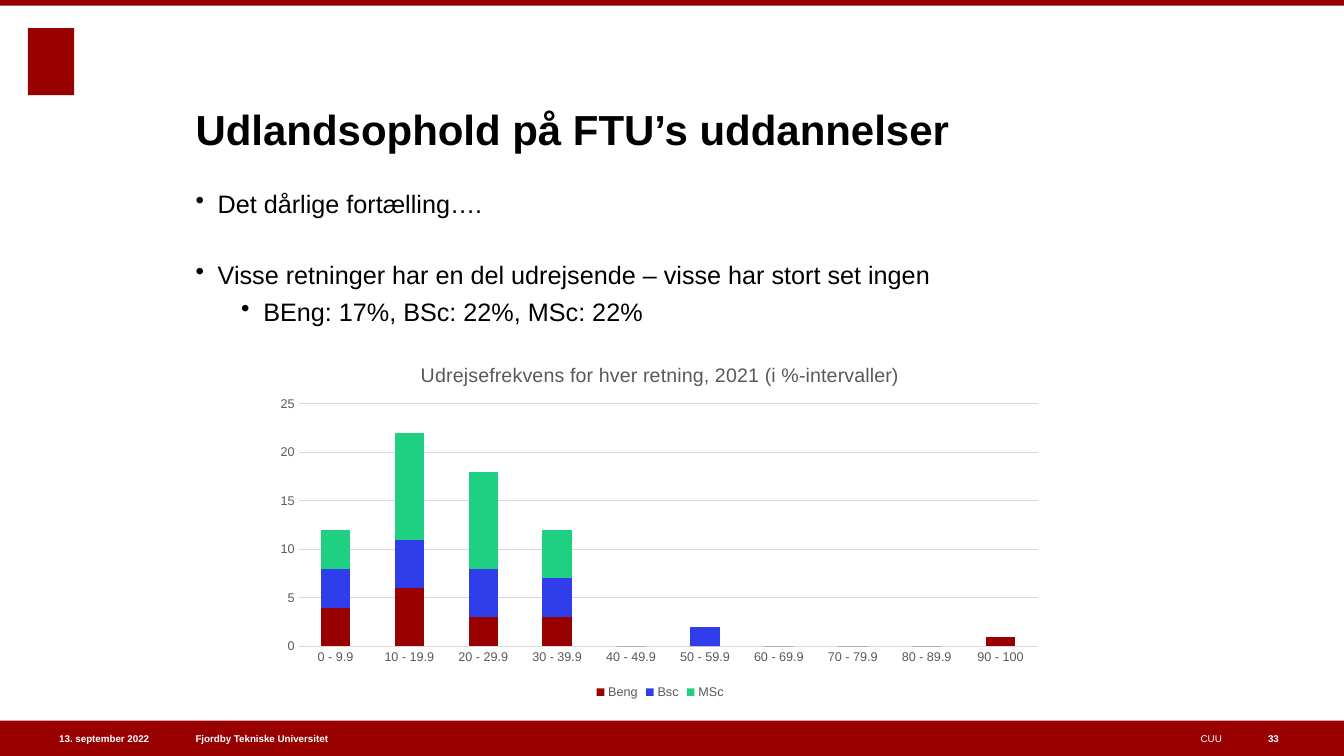
from lxml.etree import SubElement
from pptx import Presentation
from pptx.chart.data import CategoryChartData
from pptx.dml.color import RGBColor
from pptx.enum.chart import XL_CHART_TYPE as ChartType, XL_LEGEND_POSITION as LegendPosition
from pptx.enum.chart import XL_TICK_MARK as TickMark
from pptx.enum.shapes import MSO_SHAPE as Shape
from pptx.enum.text import MSO_ANCHOR as Anchor, PP_ALIGN as Align
from pptx.oxml.ns import qn
from pptx.util import Pt

COLORS = {"red": "990000", "blue": "2F3EEA", "green": "1FD082", "black": "000000",
          "white": "FFFFFF", "gray": "595959", "rule": "D9D9D9"}
FONT = "Arial"
WIDTH, HEIGHT = 960, 540
FOOTER_HEIGHT = 25.2
MARGIN, COLUMN_WIDTH = 139.7, 733

FOOTER = [
    (19.4, 87.1, "13. september 2022", Align.RIGHT, True),
    (MARGIN, 268, "Fjordby Tekniske Universitet", Align.LEFT, True),
    (440, 432.7, "CUU", Align.RIGHT, False),
    (905.8, 33.8, "33", Align.LEFT, True),
]
BULLETS = [
    ("Det dårlige fortælling….", 0, 0),
    ("Visse retninger har en del udrejsende – visse har stort set ingen", 0, 29.3),
    ("BEng: 17%, BSc: 22%, MSc: 22%", 1, 4.5),
]
CATEGORIES = [f"{low} - {low + 9}.9" for low in range(0, 90, 10)] + ["90 - 100"]
SERIES = [
    ("Beng", "red", (4, 6, 3, 3, 0, 0, 0, 0, 0, 1)),
    ("Bsc", "blue", (4, 5, 5, 4, 0, 2, 0, 0, 0, 0)),
    ("MSc", "green", (4, 11, 10, 5, 0, 0, 0, 0, 0, 0)),
]


def color(name):
    """Return the named colour."""
    return RGBColor.from_string(COLORS[name])


def style_font(font, size, name, bold=False):
    """Set typeface, size, colour and weight."""
    font.name, font.size, font.bold = FONT, Pt(size), bold
    font.color.rgb = color(name)


def add_bar(slide, left, top, width, height):
    """Draw a plain red bar."""
    shape = slide.shapes.add_shape(Shape.RECTANGLE, Pt(left), Pt(top), Pt(width), Pt(height))
    shape.shadow.inherit = False
    shape.fill.solid()
    shape.fill.fore_color.rgb = color("red")
    shape.line.fill.background()


def add_text_frame(slide, left, top, width, height, anchor):
    """Add a wrapping text box without insets and return its frame."""
    frame = slide.shapes.add_textbox(Pt(left), Pt(top), Pt(width), Pt(height)).text_frame
    frame.word_wrap = True
    frame.vertical_anchor = anchor
    frame.margin_left = frame.margin_right = frame.margin_top = frame.margin_bottom = 0
    return frame


def add_line(slide, left, top, width, height, text, size, name, bold, anchor, align=Align.LEFT):
    """Add a text box holding one paragraph."""
    paragraph = add_text_frame(slide, left, top, width, height, anchor).paragraphs[0]
    paragraph.text = text
    paragraph.alignment = align
    style_font(paragraph.font, size, name, bold)


def add_footer(slide, left, top, width, height):
    """Draw the footer band and its texts."""
    add_bar(slide, left, top, width, height)
    for offset, text_width, text, align, bold in FOOTER:
        add_line(slide, left + offset, top, text_width, height, text, 7, "white", bold,
                 Anchor.MIDDLE, align)


def add_bullets(slide, left, top, width, height):
    """Write the bulleted list with hanging indents."""
    frame = add_text_frame(slide, left, top, width, height, Anchor.TOP)
    for index, (text, level, gap) in enumerate(BULLETS):
        paragraph = frame.add_paragraph() if index else frame.paragraphs[0]
        paragraph.text = text
        paragraph.level = level
        paragraph.space_before = Pt(gap)
        style_font(paragraph.font, 18, "black")
        properties = paragraph._p.get_or_add_pPr()
        properties.set("marL", str(Pt(15.8 + 32.6 * level)))
        properties.set("indent", str(-Pt(15.8)))
        bullet = properties.makeelement(qn("a:buChar"), {"char": "•"})
        properties.insert_element_before(bullet, "a:tabLst", "a:defRPr", "a:extLst")


def place_plot(chart, x, y, w, h):
    """Fix the inner plot area, in fractions of the chart."""
    plot_area = chart.element.find(".//" + qn("c:plotArea"))
    for layout in plot_area.findall(qn("c:layout")):
        plot_area.remove(layout)
    layout = plot_area.makeelement(qn("c:layout"), {})
    plot_area.insert(0, layout)
    manual = SubElement(layout, qn("c:manualLayout"))
    settings = {"layoutTarget": "inner", "xMode": "edge", "yMode": "edge",
                "x": x, "y": y, "w": w, "h": h}
    for tag, value in settings.items():
        SubElement(manual, qn("c:" + tag)).set("val", str(value))


def style_axes(chart):
    """Style both axes and the gridlines."""
    for axis in (chart.category_axis, chart.value_axis):
        axis.major_tick_mark = axis.minor_tick_mark = TickMark.NONE
        style_font(axis.tick_labels.font, 9, "gray")
    values = chart.value_axis
    values.minimum_scale, values.maximum_scale, values.major_unit = 0, 25, 5
    values.format.line.fill.background()
    for line in (chart.category_axis.format.line, values.major_gridlines.format.line):
        line.color.rgb = color("rule")
        line.width = Pt(0.75)


def add_frequency_chart(slide, left, top, width, height):
    """Add the stacked columns of travel frequencies."""
    data = CategoryChartData()
    data.categories = CATEGORIES
    for name, _, values in SERIES:
        data.add_series(name, values)
    chart = slide.shapes.add_chart(ChartType.COLUMN_STACKED, Pt(left), Pt(top), Pt(width),
                                   Pt(height), data).chart
    style_font(chart.font, 10, "black")
    chart.has_title = True
    title = chart.chart_title
    title.include_in_layout = False
    paragraph = title.text_frame.paragraphs[0]
    paragraph.text = "Udrejsefrekvens for hver retning, 2021 (i %-intervaller)"
    style_font(paragraph.font, 14, "gray")
    chart.has_legend = True
    chart.legend.position = LegendPosition.BOTTOM
    chart.legend.include_in_layout = False
    style_font(chart.legend.font, 9, "gray")
    plot = chart.plots[0]
    plot.gap_width, plot.overlap, plot.vary_by_categories = 150, 100, False
    for series, (_, fill, _) in zip(plot.series, SERIES):
        series.format.fill.solid()
        series.format.fill.fore_color.rgb = color(fill)
    style_axes(chart)
    place_plot(chart, 0.04, 0.16, 0.94, 0.68)


def build_slide(presentation):
    """Compose the slide from its regions."""
    slide = presentation.slides.add_slide(presentation.slide_layouts[6])
    add_footer(slide, 0, HEIGHT - FOOTER_HEIGHT, WIDTH, FOOTER_HEIGHT)
    add_bar(slide, 0, 0, WIDTH, 4)
    add_bar(slide, 20, 20, 33, 48)
    add_line(slide, MARGIN, 33.8, COLUMN_WIDTH, 76.3, "Udlandsophold på FTU’s uddannelser",
             30, "black", True, Anchor.BOTTOM)
    add_bullets(slide, MARGIN, 134.6, COLUMN_WIDTH, 357.8)
    add_frequency_chart(slide, 190.8, 247.7, 561.6, 254.9)


def main():
    """Build and save the presentation."""
    presentation = Presentation()
    presentation.slide_width, presentation.slide_height = Pt(WIDTH), Pt(HEIGHT)
    build_slide(presentation)
    presentation.save("out.pptx")


if __name__ == "__main__":
    main()
